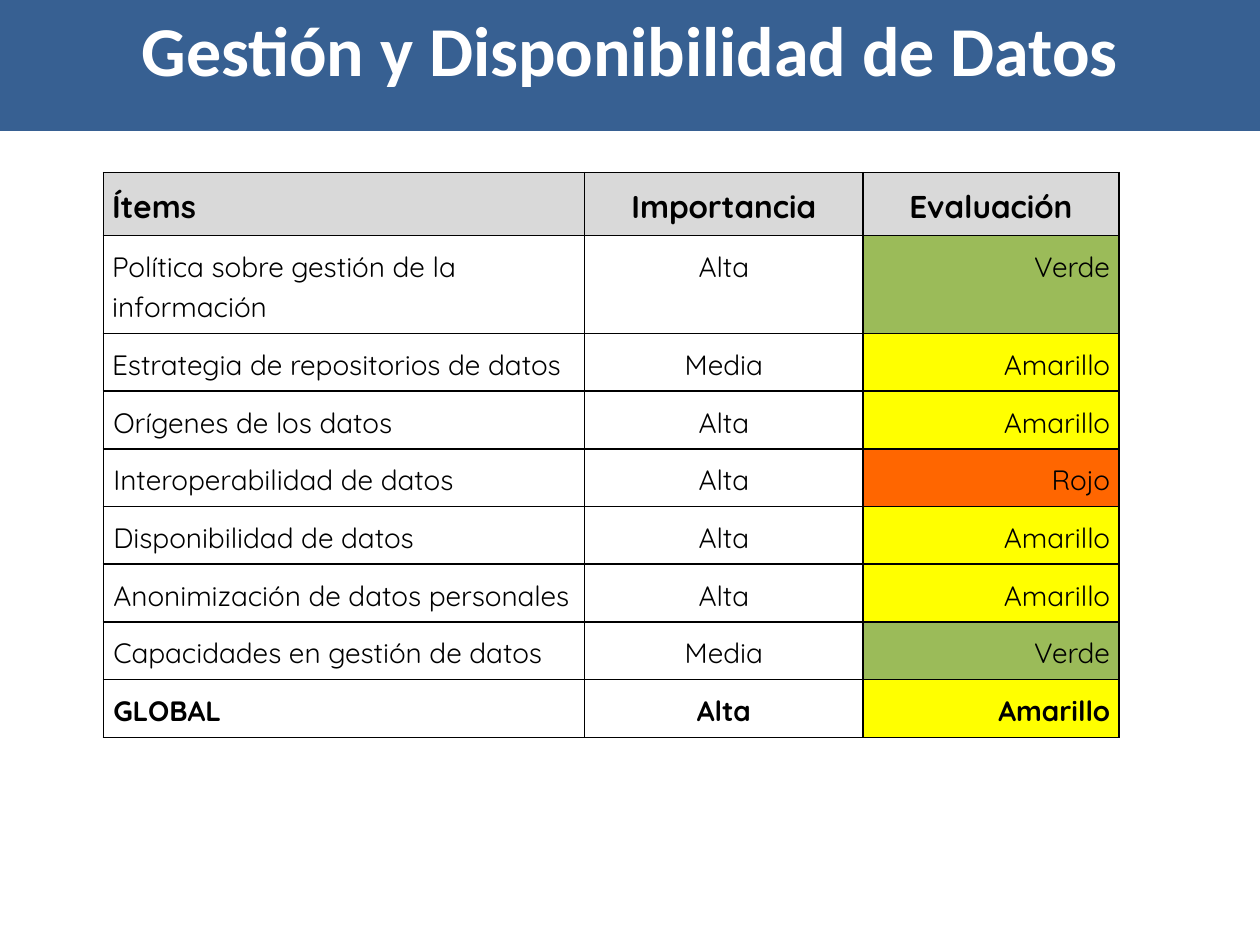
import pptx
import pptx.dml.color
import pptx.enum.shapes
import pptx.enum.text
import pptx.oxml.ns
import pptx.util
from lxml import etree
from pptx.util import Inches

ALIGN = pptx.enum.text.PP_ALIGN
BLACK = "000000"
HEADER_GREY = "D9D9D9"
RATING_COLORS = {"Verde": "9BBB59", "Amarillo": "FFFF00", "Rojo": "FF6600"}
COLUMN_WIDTHS = [3.82, 2.21, 2.03]
ROW_HEIGHT = 0.41
FIRST_INDENTED_ROW = 3
ROWS = [
    ("Ítems", "Importancia", "Evaluación"),
    ("Política sobre gestión de la información", "Alta", "Verde"),
    ("Estrategia de repositorios de datos", "Media", "Amarillo"),
    ("Orígenes de los datos", "Alta", "Amarillo"),
    ("Interoperabilidad de datos", "Alta", "Rojo"),
    ("Disponibilidad de datos", "Alta", "Amarillo"),
    ("Anonimización de datos personales", "Alta", "Amarillo"),
    ("Capacidades en gestión de datos", "Media", "Verde"),
    ("GLOBAL", "Alta", "Amarillo"),
]


def rgb(color):
    return pptx.dml.color.RGBColor.from_string(color)


def paint(fill, color):
    fill.solid()
    fill.fore_color.rgb = rgb(color)


def write(paragraph, text, font_name, size, color, bold, align):
    paragraph.text = text
    paragraph.alignment = align
    font = paragraph.font
    font.name = font_name
    font.size = pptx.util.Pt(size)
    font.bold = bold
    font.color.rgb = rgb(color)


def add_borders(cell, color, width):
    qn = pptx.oxml.ns.qn
    properties = cell._tc.get_or_add_tcPr()
    for side in ("a:lnL", "a:lnR", "a:lnT", "a:lnB"):
        border = etree.SubElement(properties, qn(side), w=str(pptx.util.Pt(width)))
        solid = etree.SubElement(border, qn("a:solidFill"))
        etree.SubElement(solid, qn("a:srgbClr"), val=color)


def fill_cell(cell, text, size, bold, align, color):
    cell.margin_left = cell.margin_right = Inches(0.07)
    cell.margin_top = cell.margin_bottom = Inches(0.07)
    paragraph = cell.text_frame.paragraphs[0]
    write(paragraph, text, "Quicksand", size, BLACK, bold, align)
    paragraph.line_spacing = 1.15
    paragraph.space_after = pptx.util.Pt(10)
    add_borders(cell, BLACK, 1)
    if color:
        paint(cell.fill, color)
    else:
        cell.fill.background()


def add_evaluation_table(slide):
    table = slide.shapes.add_table(
        len(ROWS), len(COLUMN_WIDTHS), Inches(0.82), Inches(1.37),
        Inches(sum(COLUMN_WIDTHS)), Inches(ROW_HEIGHT * len(ROWS))).table
    table.horz_banding = False
    for column, width in zip(table.columns, COLUMN_WIDTHS):
        column.width = Inches(width)
    for row_index, texts in enumerate(ROWS):
        table.rows[row_index].height = Inches(ROW_HEIGHT)
        is_header = row_index == 0
        bold = is_header or texts[0] == "GLOBAL"
        aligns = (ALIGN.LEFT, ALIGN.CENTER, ALIGN.CENTER if is_header else ALIGN.RIGHT)
        for column_index, (text, align) in enumerate(zip(texts, aligns)):
            color = HEADER_GREY if is_header else RATING_COLORS.get(text)
            fill_cell(table.cell(row_index, column_index), text,
                      18 if is_header else 16, bold, align, color)
        if row_index >= FIRST_INDENTED_ROW:
            item = table.cell(row_index, 0).text_frame.paragraphs[0]
            item._p.get_or_add_pPr().set("indent", str(Inches(0.01)))


def add_title_band(slide, text):
    band = slide.shapes.add_shape(
        pptx.enum.shapes.MSO_SHAPE.RECTANGLE, 0, 0, Inches(10), Inches(1.04))
    band.shadow.inherit = False
    paint(band.fill, "376092")
    band.line.fill.background()
    band.text_frame.word_wrap = True
    band.text_frame.vertical_anchor = pptx.enum.text.MSO_ANCHOR.TOP
    write(band.text_frame.paragraphs[0], text, "Calibri", 40, "FFFFFF", True, ALIGN.CENTER)


def main():
    presentation = pptx.Presentation()
    presentation.slide_width = Inches(10)
    presentation.slide_height = Inches(7.5)
    slide = presentation.slides.add_slide(presentation.slide_layouts[6])
    add_evaluation_table(slide)
    add_title_band(slide, "Gestión y Disponibilidad de Datos")
    presentation.save("out.pptx")


if __name__ == "__main__":
    main()
